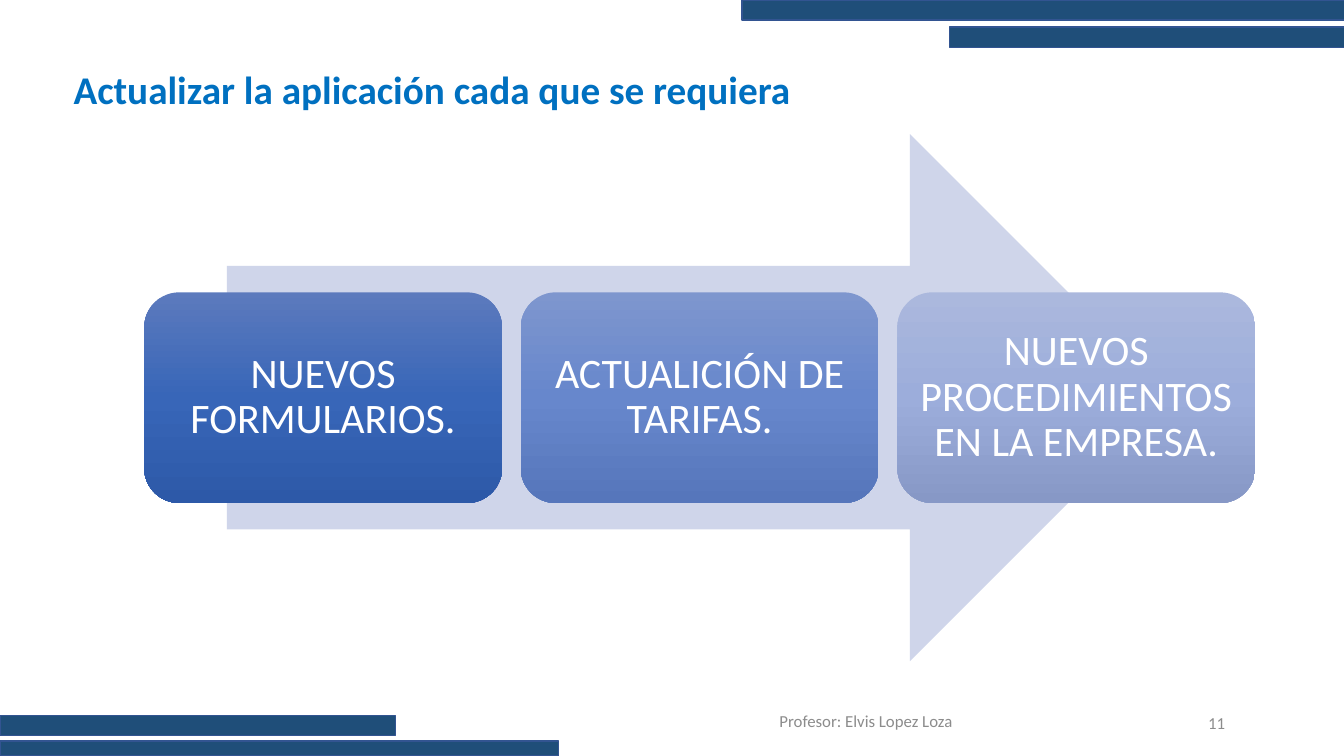
"""Build the slide about updating the application whenever required."""
import copy
from dataclasses import dataclass

import pptx
import pptx.dml.color
import pptx.enum.shapes
import pptx.enum.text
import pptx.oxml.ns
import pptx.util

Inches = pptx.util.Inches
Shape = pptx.enum.shapes.MSO_SHAPE
Align = pptx.enum.text.PP_ALIGN
Anchor = pptx.enum.text.MSO_ANCHOR
AutoSize = pptx.enum.text.MSO_AUTO_SIZE


@dataclass(frozen=True)
class Theme:
    font: str = "Calibri"
    title_size: int = 28
    step_size: int = 30
    footer_size: int = 12
    title: str = "0070C0"
    step_text: str = "FFFFFF"
    footer: str = "8C8C8C"
    bar: str = "1F4E79"
    bar_line: str = "325491"
    arrow: str = "CFD5EA"


@dataclass(frozen=True)
class Area:
    left: float
    top: float
    width: float
    height: float

    def lengths(self) -> tuple:
        return tuple(Inches(v) for v in (self.left, self.top, self.width, self.height))


@dataclass(frozen=True)
class Step:
    text: str
    gradient: tuple[str, str, str]


@dataclass(frozen=True)
class FooterItem:
    text: str
    area: Area
    align: Align


THEME = Theme()
BARS = (
    Area(7.36, 0, 5.98, 0.2),
    Area(9.42, 0.27, 3.92, 0.2),
    Area(0, 7.35, 5.54, 0.15),
    Area(0, 7.1, 3.92, 0.2),
)
FOOTER = (
    FooterItem("Profesor: Elvis Lopez Loza", Area(7.41, 6.95, 2.36, 0.4), Align.CENTER),
    FooterItem("11", Area(9.89, 6.97, 2.36, 0.4), Align.RIGHT),
)
TITLE_AREA = Area(0.63, 0.6, 7.68, 0.57)
ARROW_AREA = Area(2.25, 1.33, 9.39, 5.23)
FIRST_STEP = Area(1.43, 2.9, 3.55, 2.09)
STEP_PITCH = 3.735
STEPS = (
    Step("NUEVOS FORMULARIOS.", ("5C7ABD", "3866B8", "2D59A8")),
    Step("ACTUALICIÓN DE TARIFAS.", ("7E96CE", "6787CC", "5676BB")),
    Step("NUEVOS PROCEDIMIENTOS EN LA EMPRESA.", ("ABB8DD", "9CADDB", "8798C6")),
)


def rgb(code: str) -> pptx.dml.color.RGBColor:
    return pptx.dml.color.RGBColor.from_string(code)


def write(frame, text: str, *, size: int, color: str, bold: bool = False,
          align: Align = Align.LEFT, anchor: Anchor = Anchor.MIDDLE,
          spacing: float = 1.0, inset: float = 0.1) -> None:
    frame.word_wrap = True
    frame.vertical_anchor = anchor
    frame.margin_left = frame.margin_right = Inches(inset)
    frame.margin_top = frame.margin_bottom = Inches(inset / 2)
    frame.text = text
    paragraph = frame.paragraphs[0]
    paragraph.alignment = align
    paragraph.line_spacing = spacing
    font = paragraph.runs[0].font
    font.name = THEME.font
    font.size = pptx.util.Pt(size)
    font.bold = bold
    font.color.rgb = rgb(color)


def add_plain_shape(slide, preset: Shape, area: Area, fill: str, line: str | None = None):
    shape = slide.shapes.add_shape(preset, *area.lengths())
    shape.shadow.inherit = False
    shape.fill.solid()
    shape.fill.fore_color.rgb = rgb(fill)
    if line:
        shape.line.color.rgb = rgb(line)
        shape.line.width = pptx.util.Pt(1)
    else:
        shape.line.fill.background()
    return shape


def apply_gradient(shape, colors: tuple[str, str, str]) -> None:
    shape.fill.gradient()
    shape.fill.gradient_angle = 270
    stop_list = shape.element.spPr.find(".//" + pptx.oxml.ns.qn("a:gsLst"))
    stop_list.insert(1, copy.deepcopy(stop_list[0]))
    for stop, position, color in zip(shape.fill.gradient_stops, (0, 0.5, 1), colors):
        stop.position = position
        stop.color.rgb = rgb(color)


def add_title(slide, text: str) -> None:
    title = slide.shapes.title
    title.left, title.top, title.width, title.height = TITLE_AREA.lengths()
    write(title.text_frame, text, size=THEME.title_size, color=THEME.title,
          bold=True, anchor=Anchor.TOP)
    title.text_frame.auto_size = AutoSize.SHAPE_TO_FIT_TEXT


def add_step(slide, index: int, step: Step) -> None:
    area = Area(FIRST_STEP.left + index * STEP_PITCH, FIRST_STEP.top,
                FIRST_STEP.width, FIRST_STEP.height)
    box = add_plain_shape(slide, Shape.ROUNDED_RECTANGLE, area, step.gradient[1])
    apply_gradient(box, step.gradient)
    write(box.text_frame, step.text, size=THEME.step_size, color=THEME.step_text,
          align=Align.CENTER, spacing=0.9)


def main() -> None:
    deck = pptx.Presentation()
    deck.slide_width, deck.slide_height = Inches(13.33), Inches(7.5)
    slide = deck.slides.add_slide(deck.slide_layouts.get_by_name("Title Only"))
    for bar in BARS:
        add_plain_shape(slide, Shape.RECTANGLE, bar, THEME.bar, THEME.bar_line)
    for item in FOOTER:
        box = slide.shapes.add_textbox(*item.area.lengths())
        write(box.text_frame, item.text, size=THEME.footer_size,
              color=THEME.footer, align=item.align)
    add_title(slide, "Actualizar la aplicación cada que se requiera")
    add_plain_shape(slide, Shape.RIGHT_ARROW, ARROW_AREA, THEME.arrow)
    for index, step in enumerate(STEPS):
        add_step(slide, index, step)
    deck.save("out.pptx")


if __name__ == "__main__":
    main()
